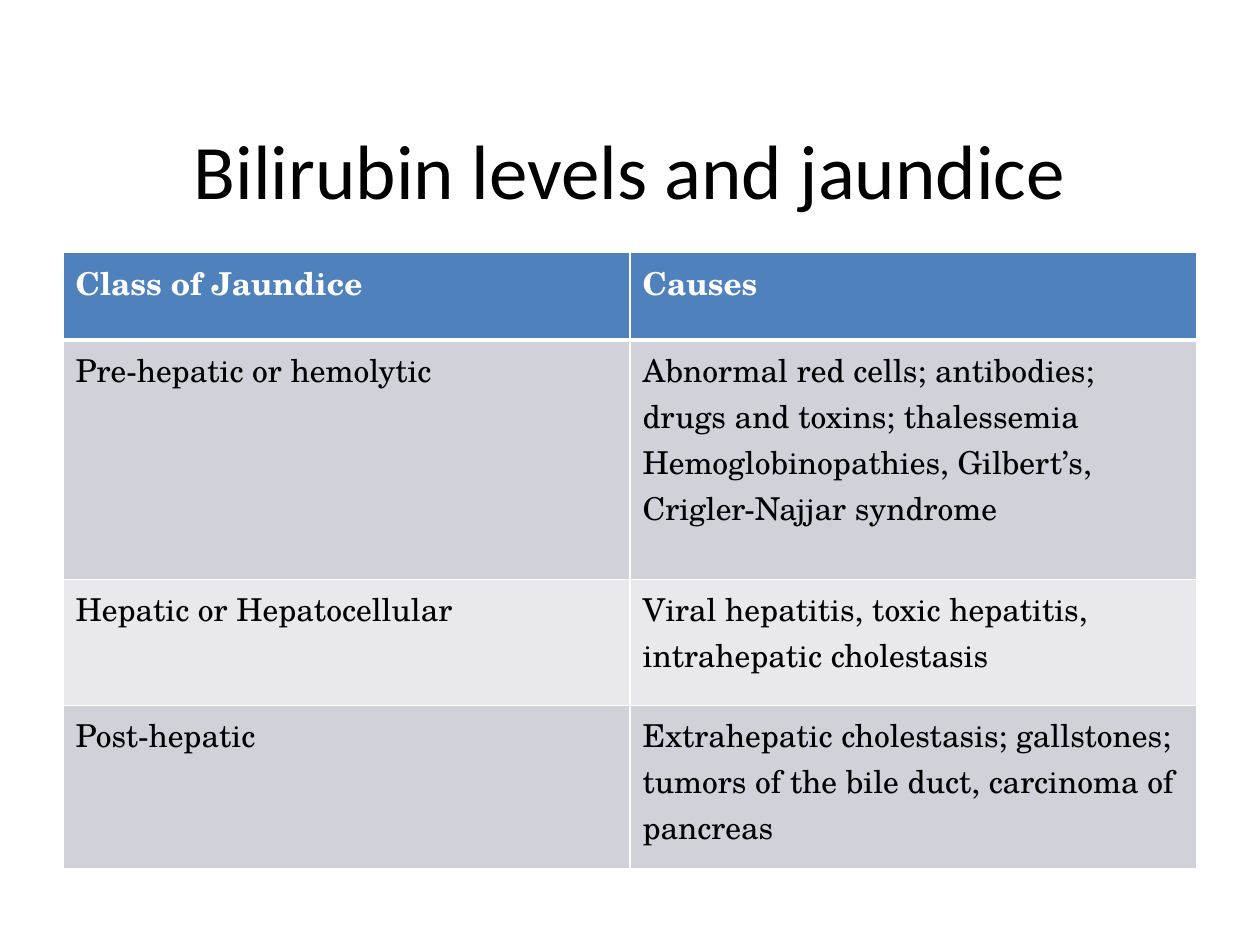
import pptx
import pptx.dml.color
import pptx.enum.text
import pptx.util
from lxml import etree

RGBColor = pptx.dml.color.RGBColor
BLACK = RGBColor(0x00, 0x00, 0x00)
WHITE = RGBColor(0xFF, 0xFF, 0xFF)
HEADER_BLUE = RGBColor(0x4F, 0x81, 0xBD)
BAND_DARK = RGBColor(0xD1, 0xD1, 0xDA)
BAND_LIGHT = RGBColor(0xE9, 0xE9, 0xED)

SLIDE_WIDTH = pptx.util.Inches(10)
SLIDE_HEIGHT = pptx.util.Inches(7.5)
MARGIN = 0.05  # share of the slide's width
DRAWING = "http://schemas.openxmlformats.org/drawingml/2006/main"

ROW_HEIGHTS = [0.7, 1.9, 1, 1.3]  # inches
JAUNDICE_ROWS = [
    ("Class of Jaundice", "Causes"),
    ("Pre-hepatic or hemolytic",
     "Abnormal red cells; antibodies; drugs and toxins; thalessemia\n"
     "Hemoglobinopathies, Gilbert’s, Crigler-Najjar syndrome"),
    ("Hepatic or Hepatocellular",
     "Viral hepatitis, toxic hepatitis, intrahepatic cholestasis"),
    ("Post-hepatic",
     "Extrahepatic cholestasis; gallstones; tumors of the bile duct, "
     "carcinoma of pancreas"),
]


def write_text(frame, text, font="TeX Gyre Schola", size=18, color=BLACK,
               bold=False, align=pptx.enum.text.PP_ALIGN.LEFT):
    """Fill a text frame, one paragraph for each line of text."""
    frame.text = text
    for paragraph in frame.paragraphs:
        paragraph.alignment = align
        for run in paragraph.runs:
            run.font.name = font
            run.font.size = pptx.util.Pt(size)
            run.font.color.rgb = color
            run.font.bold = bold


def set_borders(cell, **widths):
    """Draw white cell borders; lines must come before the cell's fill."""
    properties = cell._tc.get_or_add_tcPr()
    for position, side in enumerate(("lnL", "lnR", "lnT", "lnB")):
        line = etree.Element(f"{{{DRAWING}}}{side}",
                             w=str(pptx.util.Pt(widths.get(side, 1))))
        fill = etree.SubElement(line, f"{{{DRAWING}}}solidFill")
        etree.SubElement(fill, f"{{{DRAWING}}}srgbClr", val=str(WHITE))
        properties.insert(position, line)


def add_title(slide, left, top, width, height):
    title = slide.shapes.title
    title.left, title.top, title.width, title.height = left, top, width, height
    title.text_frame.vertical_anchor = pptx.enum.text.MSO_ANCHOR.MIDDLE
    write_text(title.text_frame, "Bilirubin levels and jaundice",
               font="Calibri", size=44, align=pptx.enum.text.PP_ALIGN.CENTER)


def add_jaundice_table(slide, left, top, width, height):
    table = slide.shapes.add_table(len(JAUNDICE_ROWS), 2, left, top,
                                   width, height).table
    for column in table.columns:
        column.width = width // 2
    for index, texts in enumerate(JAUNDICE_ROWS):
        table.rows[index].height = int(
            height * ROW_HEIGHTS[index] / sum(ROW_HEIGHTS))
        header = index == 0
        band = BAND_DARK if index % 2 else BAND_LIGHT
        for column_index, text in enumerate(texts):
            cell = table.cell(index, column_index)
            cell.fill.solid()
            cell.fill.fore_color.rgb = HEADER_BLUE if header else band
            write_text(cell.text_frame, text, bold=header,
                       color=WHITE if header else BLACK)
            # A thicker rule separates the header from the body
            set_borders(cell, lnT=3 if index == 1 else 1,
                        lnB=3 if header else 1)


def main():
    presentation = pptx.Presentation()
    presentation.slide_width = SLIDE_WIDTH
    presentation.slide_height = SLIDE_HEIGHT
    slide = presentation.slides.add_slide(presentation.slide_layouts[5])

    left = int(SLIDE_WIDTH * MARGIN)
    width = SLIDE_WIDTH - 2 * left
    # Title above, table below
    add_title(slide, left, int(SLIDE_HEIGHT * 0.1), width,
              pptx.util.Inches(1.17))
    add_jaundice_table(slide, left, pptx.util.Inches(2), width,
                       pptx.util.Inches(sum(ROW_HEIGHTS)))
    presentation.save("out.pptx")


if __name__ == "__main__":
    main()
